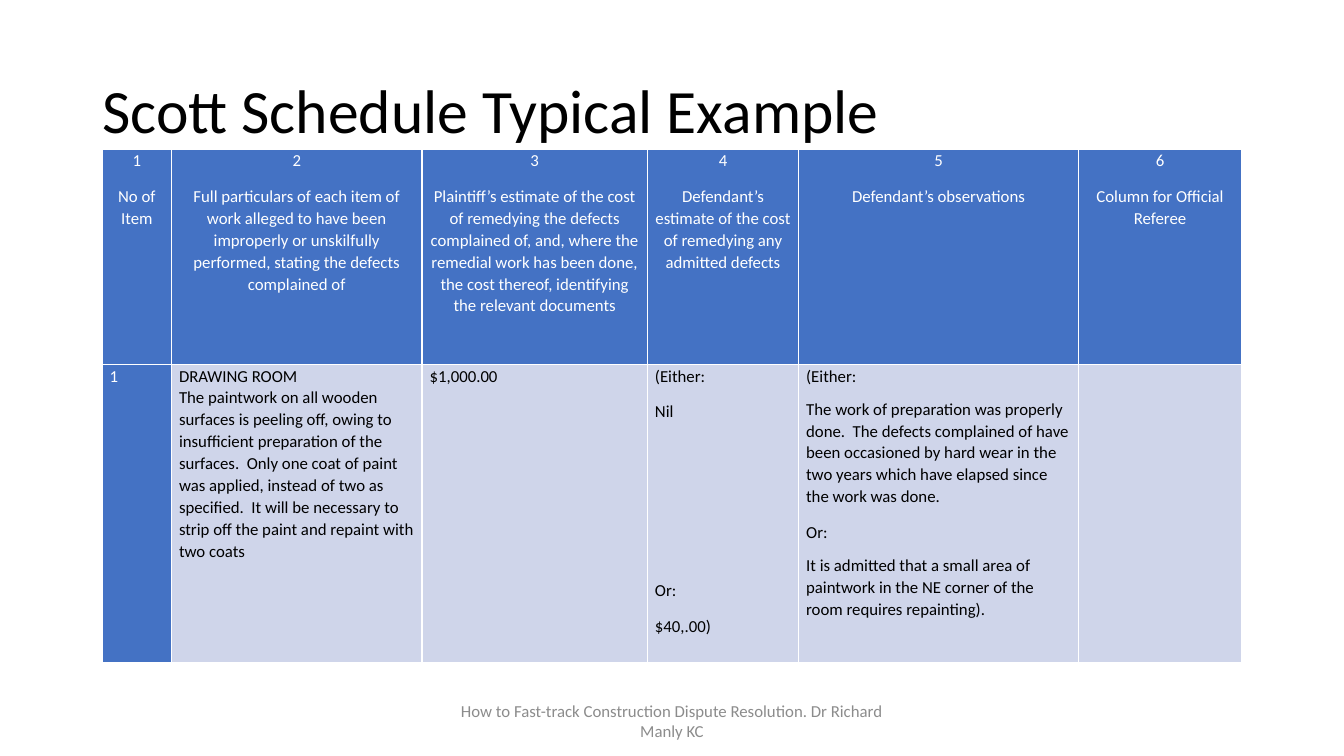
from lxml import etree
from pptx import Presentation
from pptx.dml.color import RGBColor
from pptx.enum.text import MSO_ANCHOR, MSO_AUTO_SIZE, PP_ALIGN
from pptx.oxml.ns import qn
from pptx.util import Pt

LEFT, CENTER = PP_ALIGN.LEFT, PP_ALIGN.CENTER
MIDDLE = MSO_ANCHOR.MIDDLE
NO_FIT = MSO_AUTO_SIZE.NONE
COLORS = {"blue": "4472C4", "pale": "CFD5EA", "white": "FFFFFF",
          "black": "000000", "gray": "8C8C8C"}
COLUMN_WIDTHS = [49.5, 179, 161, 108, 200, 116.5]
ROW_HEIGHTS = [154, 213]
OPTION_GAP = 104

HEADINGS = [
    "No of Item",
    "Full particulars of each item of work alleged to have been improperly or "
    "unskilfully performed, stating the defects complained of",
    "Plaintiff’s estimate of the cost of remedying the defects complained of, and, "
    "where the remedial work has been done, the cost thereof, identifying the "
    "relevant documents",
    "Defendant’s estimate of the cost of remedying any admitted defects",
    "Defendant’s observations",
    "Column for Official Referee",
]
header_row = [[(str(number), 2), (heading, 2)]
              for number, heading in enumerate(HEADINGS, 1)]
item_row = [
    [("1", 2)],
    [("DRAWING ROOM\vThe paintwork on all wooden surfaces is peeling off, owing to "
      "insufficient preparation of the surfaces.  Only one coat of paint was applied, "
      "instead of two as specified.  It will be necessary to strip off the paint and "
      "repaint with two coats", 2)],
    [("$1,000.00", 2)],
    [("(Either:", 2), ("Nil", 2), ("Or:", OPTION_GAP), ("$40,.00)", 2)],
    [("(Either:", 0),
     ("The work of preparation was properly done.  The defects complained of have been "
      "occasioned by hard wear in the two years which have elapsed since the work was "
      "done.", 0),
     ("Or:", 2),
     ("It is admitted that a small area of paintwork in the NE corner of the room "
      "requires repainting).", 0)],
    [],
]


def write(para, text, size, color, align):
    para.text = text
    para.alignment = align
    para.font.name = "Calibri"
    para.font.size = Pt(size)
    para.font.bold = False
    para.font.color.rgb = RGBColor.from_string(COLORS[color])


def add_borders(cell):
    properties = cell._tc.get_or_add_tcPr()
    for index, side in enumerate(("lnL", "lnR", "lnT", "lnB")):
        line = etree.Element(qn(f"a:{side}"), w=str(Pt(1)))
        fill = etree.SubElement(line, qn("a:solidFill"))
        etree.SubElement(fill, qn("a:srgbClr"), val=COLORS["white"])
        properties.insert(index, line)


deck = Presentation()
deck.slide_width, deck.slide_height = Pt(960), Pt(540)
page = deck.slides.add_slide(deck.slide_layouts[5])

title = page.shapes.title
title.left, title.top, title.width, title.height = Pt(66), Pt(28.75), Pt(828), Pt(104.4)
title.text_frame.auto_size = NO_FIT
title.text_frame.vertical_anchor = MIDDLE
title_para = title.text_frame.paragraphs[0]
write(title_para, "Scott Schedule Typical Example", 44, "black", LEFT)
title_para.line_spacing = 0.9

footer = page.shapes.add_textbox(Pt(318), Pt(500.5), Pt(324), Pt(28.75))
footer.text_frame.word_wrap = True
footer.text_frame.vertical_anchor = MIDDLE
write(footer.text_frame.paragraphs[0],
      "How to Fast-track Construction Dispute Resolution. Dr Richard Manly KC",
      12, "gray", CENTER)

schedule = page.shapes.add_table(2, 6, Pt(73), Pt(106.5), Pt(sum(COLUMN_WIDTHS)),
                                 Pt(sum(ROW_HEIGHTS))).table
schedule.horz_banding = False
for column, width in zip(schedule.columns, COLUMN_WIDTHS):
    column.width = Pt(width)
for row, height in zip(schedule.rows, ROW_HEIGHTS):
    row.height = Pt(height)

for row_index, contents in enumerate((header_row, item_row)):
    for column_index, paragraphs in enumerate(contents):
        cell = schedule.cell(row_index, column_index)
        is_heading = row_index == 0 or column_index == 0
        cell.fill.solid()
        cell.fill.fore_color.rgb = RGBColor.from_string(
            COLORS["blue" if is_heading else "pale"])
        cell.margin_left = cell.margin_right = Pt(5.4)
        cell.margin_top = cell.margin_bottom = 0
        add_borders(cell)
        frame = cell.text_frame
        for index, (text, space_before) in enumerate(paragraphs):
            para = frame.add_paragraph() if index else frame.paragraphs[0]
            write(para, text, 12, "white" if is_heading else "black",
                  CENTER if row_index == 0 else LEFT)
            para.line_spacing = 1.07
            para.space_before = Pt(space_before)
            para.space_after = Pt(8)

deck.save("out.pptx")
